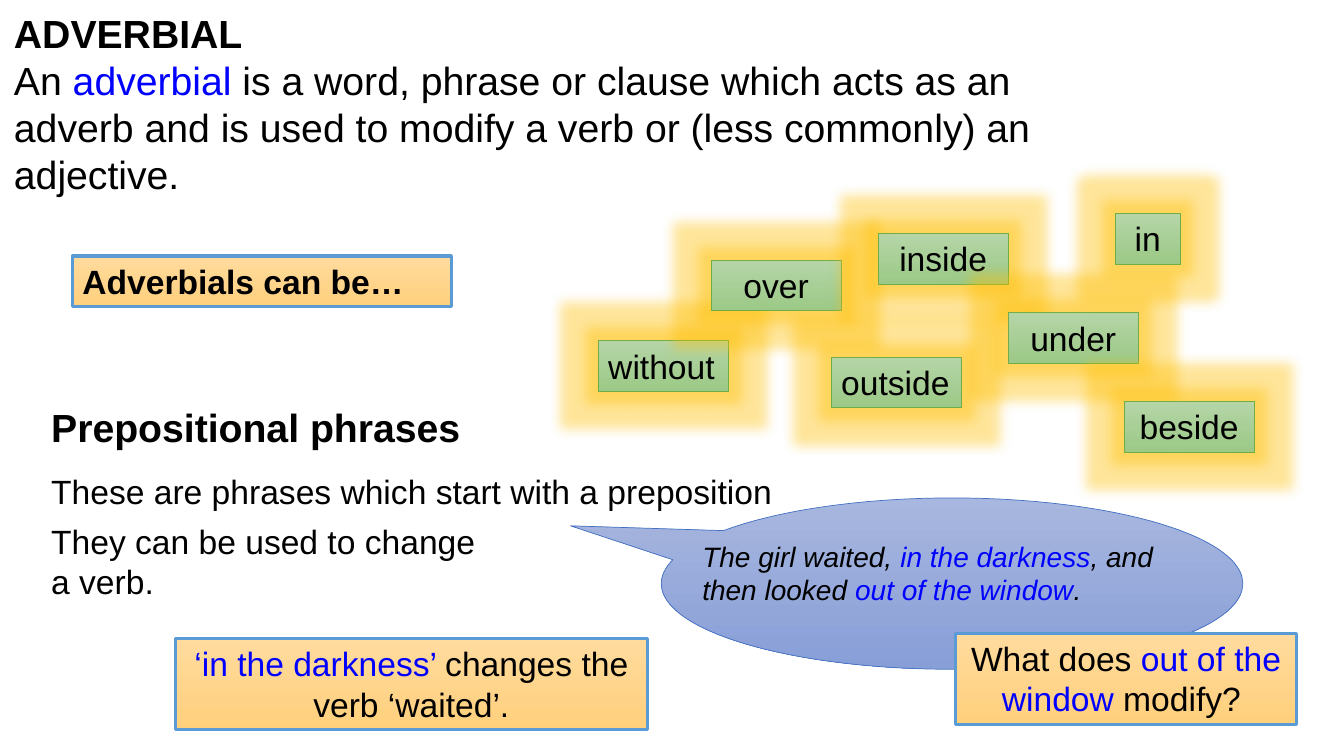
from lxml import etree
from pptx import Presentation
from pptx.dml.color import RGBColor
from pptx.enum.shapes import MSO_SHAPE
from pptx.enum.text import MSO_ANCHOR, PP_ALIGN
from pptx.oxml.ns import qn
from pptx.util import Pt

RECTANGLE, CALLOUT = MSO_SHAPE.RECTANGLE, MSO_SHAPE.OVAL_CALLOUT
LEFT, CENTER, TOP = PP_ALIGN.LEFT, PP_ALIGN.CENTER, MSO_ANCHOR.TOP

BLACK = RGBColor(0x00, 0x00, 0x00)
BLUE = RGBColor(0x00, 0x00, 0xFF)

# Each style: gradient top, gradient bottom, outline, outline width
ORANGE = (RGBColor(0xFF, 0xDB, 0x9E), RGBColor(0xFF, 0xD0, 0x7C), RGBColor(0x5B, 0x9B, 0xD5), 2.25)
GREEN = (RGBColor(0xB5, 0xD5, 0xA7), RGBColor(0x9C, 0xC9, 0x87), RGBColor(0x70, 0xAD, 0x47), 0.5)
PERIWINKLE = (RGBColor(0xA8, 0xB7, 0xDF), RGBColor(0x88, 0x9E, 0xD7), RGBColor(0x44, 0x72, 0xC4), 0.5)
GLOW_COLOR, GLOW_RADIUS, GLOW_ALPHA = RGBColor(0xFF, 0xC0, 0x00), 18, 40

# Content: a paragraph is a list of (text, colour) runs; boxes are left, top, width, height
DEFINITION = [
    [("ADVERBIAL", BLACK)],
    [("An ", BLACK), ("adverbial", BLUE),
     (" is a word, phrase or clause which acts as an adverb and is used to modify "
      "a verb or (less commonly) an adjective.", BLACK)],
]
EXAMPLE = [[("The girl waited, ", BLACK), ("in the darkness", BLUE),
            (", and then looked ", BLACK), ("out of the window", BLUE), (".", BLACK)]]
PHRASES_HEADING = [[("Prepositional phrases", BLACK)]]
PHRASES_MEANING = [[("These are phrases which start with a preposition", BLACK)]]
PHRASES_USE = [[("They can be used to change", BLACK)], [("a verb.", BLACK)]]
INTRO = [[("Adverbials can be…", BLACK)]]
ANSWER = [[("‘in the darkness’ ", BLUE), ("changes the verb ‘waited’.", BLACK)]]
QUESTION = [[("What does ", BLACK), ("out of the window ", BLUE), ("modify? ", BLACK)]]

CALLOUT_BOX = (472.4, 355.7, 415.4, 122.4)
CALLOUT_TIP = (-0.656, -0.337)

WORD_WIDTH, WORD_HEIGHT = 93.2, 36.2
PREPOSITIONS = [  # word, left, top, width, alignment
    ("without", 427.4, 243.2, WORD_WIDTH, LEFT),
    ("over", 507.8, 185.8, WORD_WIDTH, CENTER),
    ("inside", 627.1, 166.7, WORD_WIDTH, CENTER),
    ("outside", 593.8, 255, WORD_WIDTH, LEFT),
    ("under", 720, 223.2, WORD_WIDTH, CENTER),
    ("in", 796.5, 152.4, WORD_WIDTH / 2, CENTER),
    ("beside", 802.8, 286.6, WORD_WIDTH, CENTER),
]

prs = Presentation()
prs.slide_width, prs.slide_height = Pt(960), Pt(540)
slide = prs.slides.add_slide(prs.slide_layouts[6])


def write(shape, paragraphs, size=24, align=LEFT, bold=False, italic=False):
    frame = shape.text_frame
    frame.word_wrap = True
    frame.vertical_anchor = TOP
    for index, runs in enumerate(paragraphs):
        paragraph = frame.add_paragraph() if index else frame.paragraphs[0]
        paragraph.alignment = align
        for text, color in runs:
            run = paragraph.add_run()
            run.text = text
            run.font.name, run.font.size = "Arial", Pt(size)
            run.font.bold, run.font.italic = bold, italic
            run.font.color.rgb = color


def add_text(box, paragraphs, **style):
    shape = slide.shapes.add_textbox(*map(Pt, box))
    write(shape, paragraphs, **style)
    return shape


def add_panel(kind, box, style):
    top_color, bottom_color, outline, outline_width = style
    shape = slide.shapes.add_shape(kind, *map(Pt, box))
    shape.fill.gradient()
    shape.fill.gradient_angle = 270
    for stop, color in zip(shape.fill.gradient_stops, (top_color, bottom_color)):
        stop.color.rgb = color
    shape.line.color.rgb = outline
    shape.line.width = Pt(outline_width)
    shape.shadow.inherit = False
    return shape


def add_glow(shape):
    effects = shape._element.spPr.find(qn("a:effectLst"))
    glow = etree.SubElement(effects, qn("a:glow"), rad=str(Pt(GLOW_RADIUS)))
    color = etree.SubElement(glow, qn("a:srgbClr"), val=str(GLOW_COLOR))
    etree.SubElement(color, qn("a:alpha"), val=str(GLOW_ALPHA * 1000))


# Definition and introduction
definition = add_text((2.9, 2.9, 769, 143.3), DEFINITION, size=28)
definition.text_frame.paragraphs[0].runs[0].font.bold = True
add_text((29.5, 332.6, 808.6, 36.2), PHRASES_MEANING)
write(add_panel(RECTANGLE, (51.8, 182.9, 270.7, 36.2), ORANGE), INTRO, bold=True)

# Example sentence in its callout
callout = add_panel(CALLOUT, CALLOUT_BOX, PERIWINKLE)
callout.adjustments[0], callout.adjustments[1] = CALLOUT_TIP
add_text((494.6, 381.6, 376.6, 55.4), EXAMPLE, size=20, italic=True)

# Glowing prepositions
for word, left, top, width, align in PREPOSITIONS:
    card = add_panel(RECTANGLE, (left, top, width, WORD_HEIGHT), GREEN)
    add_glow(card)
    write(card, [[(word, BLACK)]], align=align)

# Prepositional phrases
add_text((29.5, 284.4, 315.4, 41), PHRASES_HEADING, size=28, bold=True)
add_text((29.5, 368.6, 348.5, 65.5), PHRASES_USE)

# Answer and question
for box, paragraphs in (((125.3, 455.8, 337, 65.5), ANSWER),
                        ((682.6, 452.2, 243.4, 65.5), QUESTION)):
    write(add_panel(RECTANGLE, box, ORANGE), paragraphs, align=CENTER)

prs.save("out.pptx")
